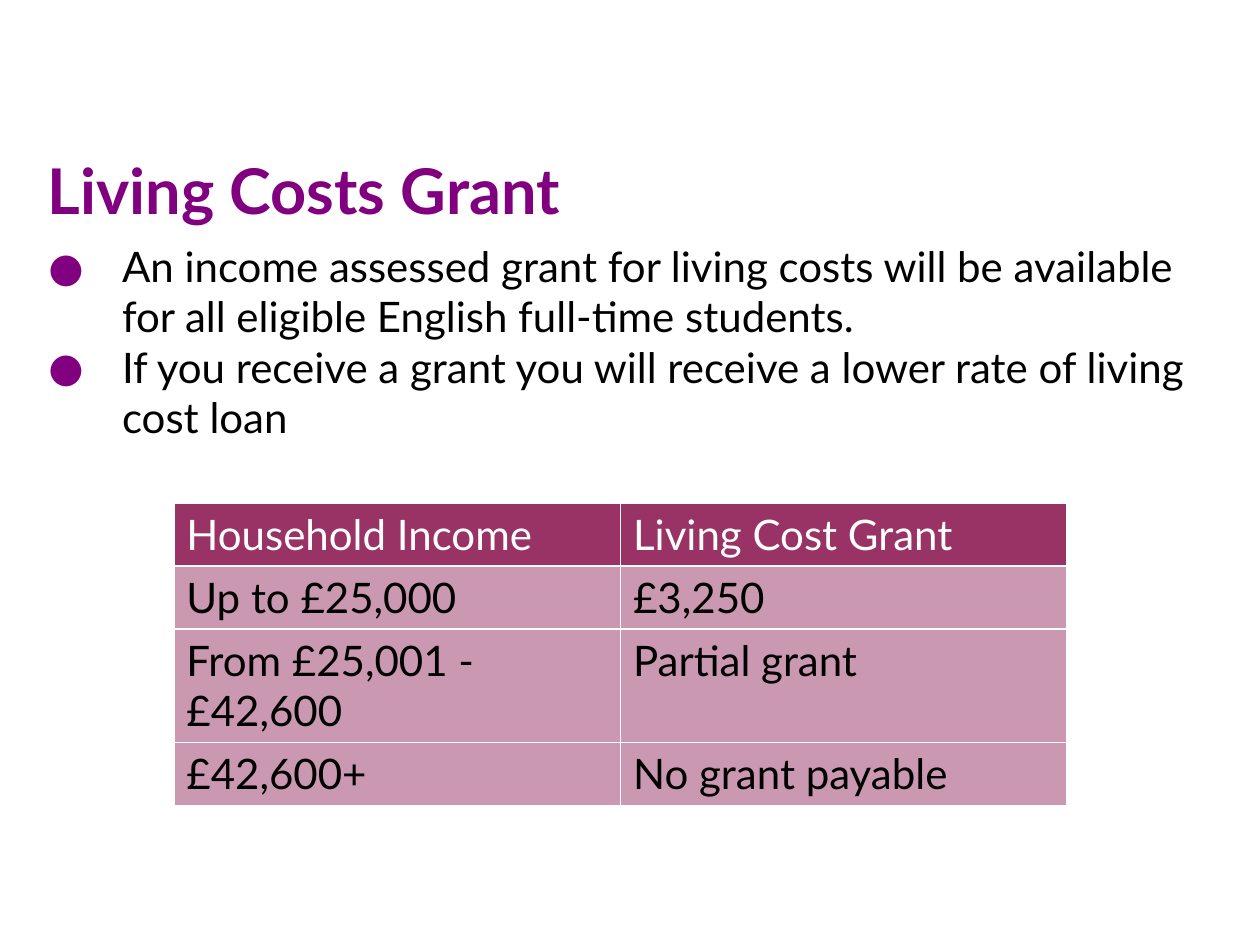
from dataclasses import dataclass

from lxml import etree
from pptx import Presentation, util as u
from pptx.dml.color import RGBColor
from pptx.oxml import ns


@dataclass(frozen=True)
class Theme:
    font: str = "Lato"
    purple: str = "800080"
    plum: str = "993366"
    black: str = "000000"
    white: str = "FFFFFF"
    title_size: int = 36
    body_size: int = 24
    border_width: int = 1
    row_alpha: int = 50


THEME = Theme()

BULLETS = [
    "An income assessed grant for living costs will be available "
    "for all eligible English full-time students.",
    "If you receive a grant you will receive a lower rate of living cost loan",
]
GRANT_ROWS = [
    ("Household Income", "Living Cost Grant"),
    ("Up to £25,000", "£3,250"),
    ("From £25,001 - £42,600", "Partial grant"),
    ("£42,600+", "No grant payable"),
]
ROW_HEIGHTS = [0.5, 0.5, 0.9, 0.5]


def add_child(parent, tag, **attributes):
    return etree.SubElement(parent, ns.qn(tag), attributes)


def style_text(para, size, color, bold=False):
    for span in para.runs:
        span.font.name = THEME.font
        span.font.size = u.Pt(size)
        span.font.bold = bold
        span.font.color.rgb = RGBColor.from_string(color)


def add_text_frame(page, box):
    frame = page.shapes.add_textbox(*map(u.Inches, box)).text_frame
    frame.word_wrap = True
    return frame


def add_title(page, box, title):
    frame = add_text_frame(page, box)
    frame.text = title
    style_text(frame.paragraphs[0], THEME.title_size, THEME.purple, bold=True)


def set_bullet(para, indent):
    """Give the paragraph a large purple dot with a hanging indent."""
    properties = para._p.get_or_add_pPr()
    properties.set("marL", str(indent))
    properties.set("indent", str(-indent))
    color = add_child(properties, "a:buClr")
    add_child(color, "a:srgbClr", val=THEME.purple)
    add_child(properties, "a:buSzPct", val="150000")
    add_child(properties, "a:buFont", typeface=THEME.font)
    add_child(properties, "a:buChar", char="●")


def add_bullets(page, box, lines):
    frame = add_text_frame(page, box)
    frame.text = "\n".join(lines)
    for para in frame.paragraphs:
        set_bullet(para, u.Inches(0.59))
        style_text(para, THEME.body_size, THEME.black)


def set_borders(cell):
    properties = cell._tc.get_or_add_tcPr()
    for side in ("a:lnL", "a:lnR", "a:lnT", "a:lnB"):
        line = add_child(properties, side, w=str(u.Pt(THEME.border_width)))
        fill = add_child(line, "a:solidFill")
        add_child(fill, "a:srgbClr", val=THEME.white)


def style_cell(cell, is_header):
    set_borders(cell)
    cell.fill.solid()
    cell.fill.fore_color.rgb = RGBColor.from_string(THEME.plum)
    if not is_header:
        color = cell._tc.tcPr.find(".//" + ns.qn("a:srgbClr") + f"[@val='{THEME.plum}']")
        add_child(color, "a:alpha", val=str(THEME.row_alpha * 1000))
    text_color = THEME.white if is_header else THEME.black
    style_text(cell.text_frame.paragraphs[0], THEME.body_size, text_color)


def add_grant_table(page, box, rows, heights):
    frame = page.shapes.add_table(len(rows), len(rows[0]), *map(u.Inches, box))
    table = frame.table
    for row_index, (values, height) in enumerate(zip(rows, heights)):
        table.rows[row_index].height = u.Inches(height)
        for column_index, value in enumerate(values):
            cell = table.cell(row_index, column_index)
            cell.text = value
            style_cell(cell, is_header=row_index == 0)


def main():
    deck = Presentation()
    deck.slide_width, deck.slide_height = u.Inches(10), u.Inches(7.5)
    page = deck.slides.add_slide(deck.slide_layouts[6])
    add_title(page, (0.28, 1.15, 8.43, 0.71), "Living Costs Grant")
    add_bullets(page, (0.28, 1.86, 9.45, 2.32), BULLETS)
    add_grant_table(page, (1.38, 3.99, 7.09, sum(ROW_HEIGHTS)), GRANT_ROWS, ROW_HEIGHTS)
    deck.save("out.pptx")


if __name__ == "__main__":
    main()
